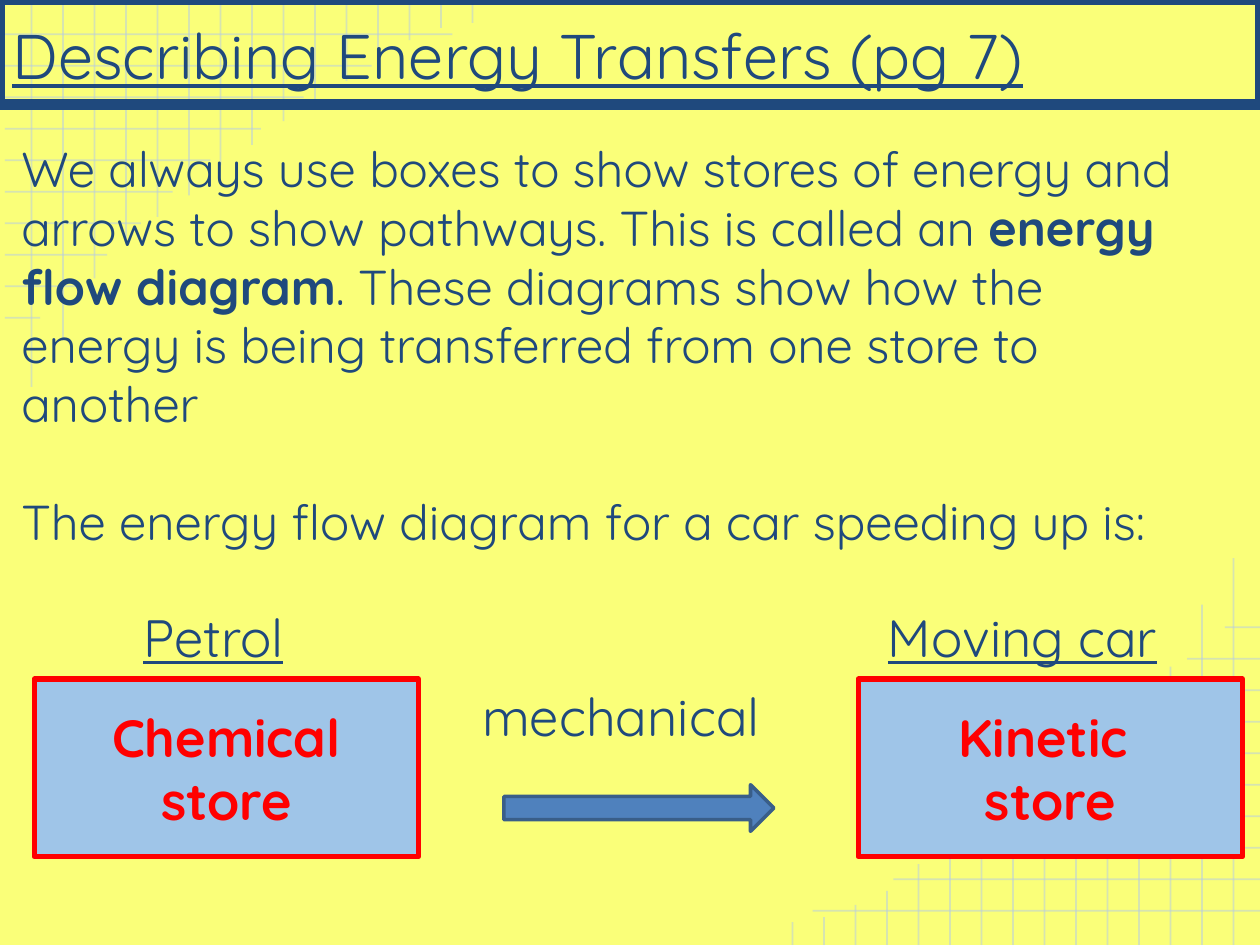
from lxml import etree
from pptx import Presentation
from pptx.dml.color import RGBColor
from pptx.enum.shapes import MSO_CONNECTOR, MSO_SHAPE
from pptx.enum.text import MSO_ANCHOR, MSO_AUTO_SIZE, PP_ALIGN
from pptx.oxml.ns import qn
from pptx.util import Cm, Pt

LEFT, CENTER = PP_ALIGN.LEFT, PP_ALIGN.CENTER
TOP, MIDDLE, BOTTOM = MSO_ANCHOR.TOP, MSO_ANCHOR.MIDDLE, MSO_ANCHOR.BOTTOM
RECT, ARROW = MSO_SHAPE.RECTANGLE, MSO_SHAPE.RIGHT_ARROW
STRAIGHT, NO_FIT = MSO_CONNECTOR.STRAIGHT, MSO_AUTO_SIZE.NONE

FONT = "Quicksand"
NAVY, RED, PALE, GRID = "1F497D", "FF0000", "9FC5E8", "B7CCE4"
PAGE, BLUE, EDGE = "FAFF79", "4F81BD", "395E89"
WIDE, HIGH = 25.4, 19.05

TITLE = [["Describing Energy Transfers (pg 7)"]]
BODY = [
    ["We always use boxes to show stores of energy and arrows to show "
     "pathways. This is called an ",
     "energy flow diagram",
     ". These diagrams show how the energy is being transferred from one "
     "store to another"],
    ["The energy flow diagram for a car speeding up is:"],
]
LABELS = [
    ("Petrol", (2.64, 11.94, 3.89, 1.6), True),
    ("Moving car", (17.65, 11.94, 7.39, 1.6), True),
    ("mechanical", (9.47, 13.54, 6.78, 1.6), False),
]
STORES = [
    ([["Chemical store"]], 0.69),
    ([["Kinetic "], ["store"]], 17.3),
]
STEP = WIDE / 40
EDGE_X, ROW_TOP = 0.1, 0.69
ROWS = [9.12, 7.49, 6.12, 5.26, 4.24, 3.48, 2.84, 2.16, 1.57, 0.81]
COLS = [7.8, 6.86, 5.61, 4.9, 4.37, 3.94, 3.33, 2.92, 2.44, 2.08,
        1.63, 1.09, 0.81, 0.56, 0.46]


def tint(code):
    return RGBColor.from_string(code)


def place(shape, box):
    shape.left, shape.top, shape.width, shape.height = map(Cm, box)


def write(shape, paras, size=30, color=NAVY, bold=False, under=False,
          align=LEFT, anchor=TOP, gap=0, plain=False):
    frame = shape.text_frame
    frame.auto_size = NO_FIT
    frame.word_wrap = True
    frame.vertical_anchor = anchor
    frame.margin_left = frame.margin_right = Cm(0.25)
    frame.margin_top = frame.margin_bottom = Cm(0.25)
    for num, parts in enumerate(paras):
        para = frame.add_paragraph() if num else frame.paragraphs[0]
        if plain:
            props = para._p.get_or_add_pPr()
            props.set("marL", "0")
            props.set("indent", "0")
            etree.SubElement(props, qn("a:buNone"))
        para.alignment = align
        para.line_spacing = 1.0
        para.space_before = Pt(gap if num else 0)
        for spot, text in enumerate(parts):
            run = para.add_run()
            run.text = text
            font = run.font
            font.name, font.size = FONT, Pt(size)
            font.bold = bold or spot % 2 == 1
            font.underline = under
            font.color.rgb = tint(color)


def border(shape, color, width):
    shape.line.color.rgb = tint(color)
    shape.line.width = Pt(width)


def block(slide, kind, box, fill, line, width):
    shape = slide.shapes.add_shape(kind, *map(Cm, box))
    shape.shadow.inherit = False
    shape.fill.solid()
    shape.fill.fore_color.rgb = tint(fill)
    border(shape, line, width)
    return shape


def rule(slide, ends):
    line = slide.shapes.add_connector(STRAIGHT, *map(Cm, ends))
    border(line, GRID, 1)
    shade = line._element.find(".//" + qn("a:srgbClr"))
    etree.SubElement(shade, qn("a:alpha")).set("val", "53000")
    etree.SubElement(line._element.spPr, qn("a:effectLst"))
    slide.shapes._spTree.insert(2, line._element)


def grid(slide):
    lines = [(EDGE_X, ROW_TOP + i * STEP, end, ROW_TOP + i * STEP)
             for i, end in enumerate(ROWS)]
    lines += [((i + 1) * STEP, end, (i + 1) * STEP, 0)
              for i, end in enumerate(COLS)]
    far = WIDE + EDGE_X
    for x1, y1, x2, y2 in lines:
        rule(slide, (x1, y1, x2, y2))
        rule(slide, (far - x1, HIGH - y1, far - x2, HIGH - y2))


def main():
    deck = Presentation()
    deck.slide_width, deck.slide_height = Cm(WIDE), Cm(HIGH)
    slide = deck.slides.add_slide(deck.slide_layouts[1])
    back = slide.background.fill
    back.solid()
    back.fore_color.rgb = tint(PAGE)
    grid(slide)

    title, body = slide.placeholders
    place(title, (0, 0, WIDE, 2.11))
    border(title, NAVY, 6)
    write(title, TITLE, size=36, under=True, anchor=BOTTOM)
    place(body, (0.18, 2.54, 24.51, 8.86))
    write(body, BODY, size=28, gap=33.6, plain=True)

    block(slide, ARROW, (10.16, 15.82, 5.44, 0.94), BLUE, EDGE, 2)
    for text, box, under in LABELS:
        label = slide.shapes.add_textbox(*map(Cm, box))
        write(label, [[text]], under=under)
    for paras, left in STORES:
        store = block(slide, RECT, (left, 13.69, 7.75, 3.58), PALE, RED, 3)
        write(store, paras, color=RED, bold=True, align=CENTER, anchor=MIDDLE)
    deck.save("out.pptx")


if __name__ == "__main__":
    main()
